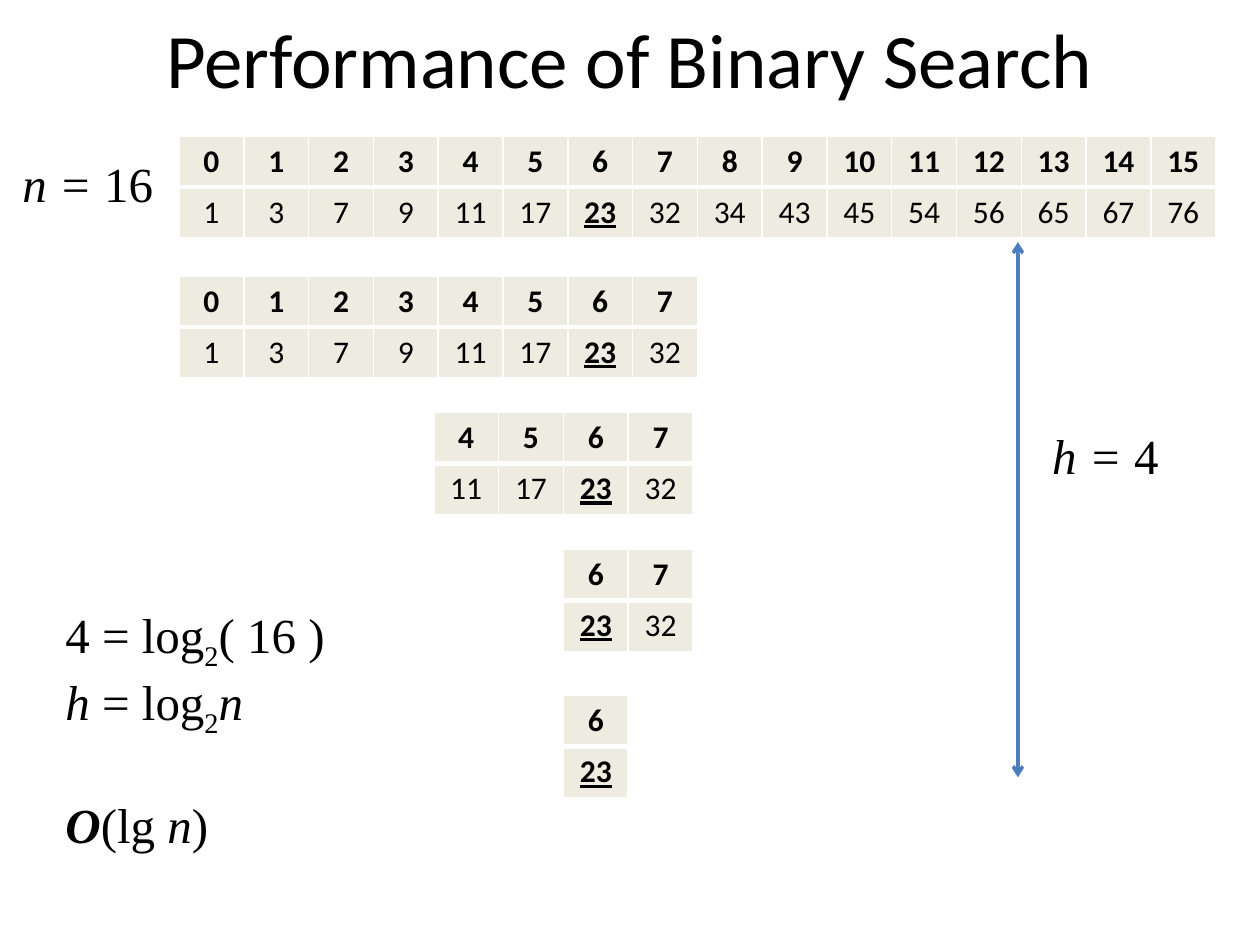
from dataclasses import dataclass

from lxml.etree import SubElement
from pptx import Presentation
from pptx.dml.color import RGBColor
from pptx.enum.shapes import MSO_CONNECTOR
from pptx.enum.text import MSO_ANCHOR, MSO_AUTO_SIZE, PP_ALIGN
from pptx.oxml import parse_xml
from pptx.oxml.ns import nsdecls, qn
from pptx.util import Cm, Pt


@dataclass(frozen=True)
class Theme:
    ink: str = "000000"
    cell: str = "EEECE1"
    rule: str = "FFFFFF"
    arrow: str = "4B7EBC"
    sans: str = "Calibri"
    serif: str = "Times New Roman"
    title_size: int = 44
    formula_size: int = 28
    cell_size: int = 18


THEME = Theme()
VALUES = [1, 3, 7, 9, 11, 17, 23, 32, 34, 43, 45, 54, 56, 65, 67, 76]
TARGET = 23
COLUMN = 20.9 / len(VALUES)
ROW = 1.03
STEPS = [
    (0, 16, 3.61, 2.74),
    (0, 8, 3.61, 5.56),
    (4, 8, 3.52, 8.31),
    (6, 8, 3.52, 11.07),
    (6, 7, 3.52, 14.02),
]


def write(paragraph, text, font=THEME.serif, size=THEME.formula_size,
          bold=False, italic=False, underline=False, baseline=None):
    run = paragraph.add_run()
    run.text = text
    run.font.name = font
    run.font.size = Pt(size)
    run.font.bold = bold
    run.font.italic = italic
    run.font.underline = underline
    run.font.color.rgb = RGBColor.from_string(THEME.ink)
    if baseline is not None:
        run.font._element.set("baseline", str(baseline * 1000))


def add_title(slide, text):
    title = slide.shapes.title
    title.left, title.top, title.width, title.height = Cm(1.27), Cm(0), Cm(22.86), Cm(2.33)
    title.text_frame.vertical_anchor = MSO_ANCHOR.MIDDLE
    heading = title.text_frame.paragraphs[0]
    heading.alignment = PP_ALIGN.CENTER
    write(heading, text, font=THEME.sans, size=THEME.title_size)


def add_formulas(slide, left, top, width, height, lines, last_gap=0):
    frame = slide.shapes.add_textbox(Cm(left), Cm(top), Cm(width), Cm(height)).text_frame
    frame.word_wrap = False
    frame.auto_size = MSO_AUTO_SIZE.SHAPE_TO_FIT_TEXT
    for number, pieces in enumerate(lines):
        line = frame.add_paragraph() if number else frame.paragraphs[0]
        for text, style in pieces:
            write(line, text, **style)
    line.space_before = Pt(last_gap)


def set_borders(cell, **widths):
    properties = cell._tc.get_or_add_tcPr()
    for position, (side, width) in enumerate(widths.items()):
        border = parse_xml(
            f'<a:ln{side} {nsdecls("a")} w="{Pt(width)}"><a:solidFill>'
            f'<a:srgbClr val="{THEME.rule}"/></a:solidFill></a:ln{side}>')
        properties.insert(position, border)


def fill_cell(cell, value, is_header):
    cell.fill.solid()
    cell.fill.fore_color.rgb = RGBColor.from_string(THEME.cell)
    set_borders(cell, L=1, R=1, T=1 if is_header else 3, B=3 if is_header else 1)
    is_target = not is_header and value == TARGET
    entry = cell.text_frame.paragraphs[0]
    entry.alignment = PP_ALIGN.CENTER
    write(entry, str(value), font=THEME.sans, size=THEME.cell_size,
          bold=is_header or is_target, underline=is_target)


def add_search_step(slide, first, stop, origin, top):
    count = stop - first
    table = slide.shapes.add_table(
        2, count, Cm(origin + first * COLUMN), Cm(top),
        Cm(count * COLUMN), Cm(2 * ROW)).table
    table.first_row = table.horz_banding = False
    for row in table.rows:
        row.height = Cm(ROW)
    for column, index in enumerate(range(first, stop)):
        table.columns[column].width = Cm(COLUMN)
        fill_cell(table.cell(0, column), index, True)
        fill_cell(table.cell(1, column), VALUES[index], False)


def add_height_arrow(slide, x, top, bottom):
    arrow = slide.shapes.add_connector(
        MSO_CONNECTOR.STRAIGHT, Cm(x), Cm(top), Cm(x), Cm(bottom))
    arrow.line.color.rgb = RGBColor.from_string(THEME.arrow)
    arrow.line.width = Pt(2)
    outline = arrow.line._get_or_add_ln()
    for end in ("a:headEnd", "a:tailEnd"):
        SubElement(outline, qn(end), type="arrow")
    SubElement(arrow._element.spPr, qn("a:effectLst"))


def main():
    deck = Presentation()
    deck.slide_width, deck.slide_height = Cm(25.4), Cm(19.05)
    slide = deck.slides.add_slide(deck.slide_layouts[5])
    plain, italic = {}, {"italic": True}
    subscript = {"baseline": -25}

    add_title(slide, "Performance of Binary Search")
    for step in STEPS:
        add_search_step(slide, *step)
    add_height_arrow(slide, 20.52, 4.88, 15.67)
    add_formulas(slide, 0.2, 2.97, 3.18, 1.45, [[("n = ", italic), ("16", plain)]])
    add_formulas(slide, 20.96, 8.46, 2.69, 1.45, [[("h = ", italic), ("4", plain)]])
    add_formulas(slide, 1.07, 12.07, 5.84, 5.05, [
        [("4 = log", plain), ("2", subscript), ("( 16 )", plain)],
        [("h", italic), (" = log", plain), ("2", subscript), ("n", italic)],
        [("O", {"bold": True, "italic": True}), ("(lg ", plain), ("n", italic), (")", plain)],
    ], last_gap=32)
    deck.save("out.pptx")


if __name__ == "__main__":
    main()
